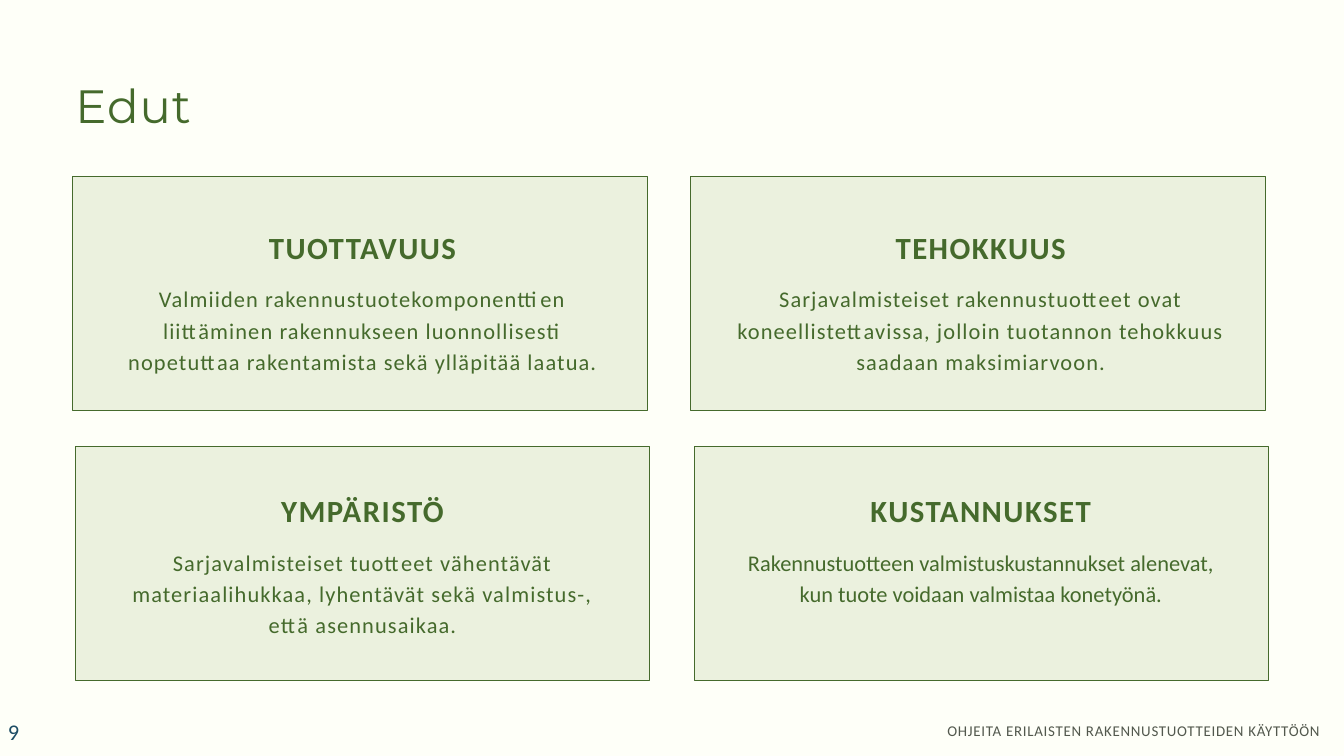
import dataclasses

import pptx
import pptx.dml.color
import pptx.enum.shapes
import pptx.enum.text
import pptx.util

EMU_PER_PX = 9144  # 100 px to the inch
GREEN, PALE, CREAM, GREY, BLUE = "456A2C", "EBF1DE", "FEFFF8", "52584D", "1E4D65"
ALIGN = pptx.enum.text.PP_ALIGN
ANCHOR = pptx.enum.text.MSO_ANCHOR

CARD_WIDTH, CARD_HEIGHT = 855, 348
TEXT_WIDTH = 739
HEADING_HEIGHT, BODY_HEIGHT = 56, 140
BODY_OFFSET = 80  # from heading top to body top


@dataclasses.dataclass
class Card:
    left: int
    top: int
    text_left: int
    text_top: int
    heading: str
    body: str
    body_spacing: float = 1.2


CARDS = [
    Card(108, 262, 170, 338, "TUOTTAVUUS",
         "Valmiiden rakennustuotekomponenttien liittäminen rakennukseen "
         "luonnollisesti nopetuttaa rakentamista sekä ylläpitää laatua."),
    Card(1028, 262, 1090, 338, "TEHOKKUUS",
         "Sarjavalmisteiset rakennustuotteet ovat koneellistettavissa, "
         "jolloin tuotannon tehokkuus saadaan maksimiarvoon."),
    Card(112, 664, 170, 730, "YMPÄRISTÖ",
         "Sarjavalmisteiset tuotteet vähentävät materiaalihukkaa, "
         "lyhentävät sekä valmistus-, että asennusaikaa."),
    Card(1033, 664, 1090, 730, "KUSTANNUKSET",
         "Rakennustuotteen valmistuskustannukset alenevat, "
         "kun tuote voidaan valmistaa konetyönä.", body_spacing=0),
]


def px(length: int) -> pptx.util.Emu:
    return pptx.util.Emu(length * EMU_PER_PX)


def color(value: str) -> pptx.dml.color.RGBColor:
    return pptx.dml.color.RGBColor.from_string(value)


def write(box, text: str, *, size: float, font: str = "Calibri", fill: str = GREEN,
          bold: bool = False, spacing: float = 0, line: float | None = None,
          align=ALIGN.LEFT, anchor=ANCHOR.TOP, inset: tuple[int, int] = (0, 0)) -> None:
    """Fill a box with one formatted paragraph; size, spacing and line are points."""
    frame = box.text_frame
    frame.word_wrap = True
    frame.auto_size = pptx.enum.text.MSO_AUTO_SIZE.NONE
    frame.vertical_anchor = anchor
    frame.margin_left = frame.margin_right = px(inset[0])
    frame.margin_top = frame.margin_bottom = px(inset[1])
    para = frame.paragraphs[0]
    para.alignment = align
    if line is not None:
        para.line_spacing = pptx.util.Pt(line)
    span = para.add_run()
    span.text = text
    span.font.name = font
    span.font.size = pptx.util.Pt(size)
    span.font.bold = bold
    span.font.color.rgb = color(fill)
    span.font._element.set("spc", str(round(spacing * 100)))


def add_text(page, left: int, top: int, width: int, height: int, text: str, **style) -> None:
    box = page.shapes.add_textbox(px(left), px(top), px(width), px(height))
    write(box, text, **style)


def add_card(page, card: Card) -> None:
    panel = page.shapes.add_shape(
        pptx.enum.shapes.MSO_SHAPE.RECTANGLE,
        px(card.left), px(card.top), px(CARD_WIDTH), px(CARD_HEIGHT))
    panel.shadow.inherit = False
    panel.fill.solid()
    panel.fill.fore_color.rgb = color(PALE)
    panel.line.color.rgb = color(GREEN)
    panel.line.width = pptx.util.Pt(0.75)
    add_text(page, card.text_left, card.text_top, TEXT_WIDTH, HEADING_HEIGHT, card.heading,
             size=33, bold=True, spacing=1.6, line=41.2, align=ALIGN.CENTER)
    add_text(page, card.text_left, card.text_top + BODY_OFFSET, TEXT_WIDTH, BODY_HEIGHT,
             card.body, size=24, spacing=card.body_spacing, line=33.6, align=ALIGN.CENTER)


def main() -> None:
    deck = pptx.Presentation()
    deck.slide_width, deck.slide_height = px(2000), px(1125)
    page = deck.slides.add_slide(deck.slide_layouts[5])
    page.background.fill.solid()
    page.background.fill.fore_color.rgb = color(CREAM)

    # Title
    title = page.shapes.title
    title.left, title.top, title.width, title.height = px(112), px(105), px(1771), px(89)
    write(title, "Edut", size=50, font="Montserrat", spacing=1, line=66.8)

    # Benefit cards
    for card in CARDS:
        add_card(page, card)

    # Footer and page number
    add_text(page, 1133, 1070, 832, 29, "OHJEITA ERILAISTEN RAKENNUSTUOTTEIDEN KÄYTTÖÖN",
             size=16, fill=GREY, spacing=0.8, line=22.4, align=ALIGN.RIGHT)
    add_text(page, 2, 1069, 233, 40, "9", size=24, fill=BLUE, spacing=1.2,
             anchor=ANCHOR.MIDDLE, inset=(10, 5))

    deck.save("out.pptx")


if __name__ == "__main__":
    main()
